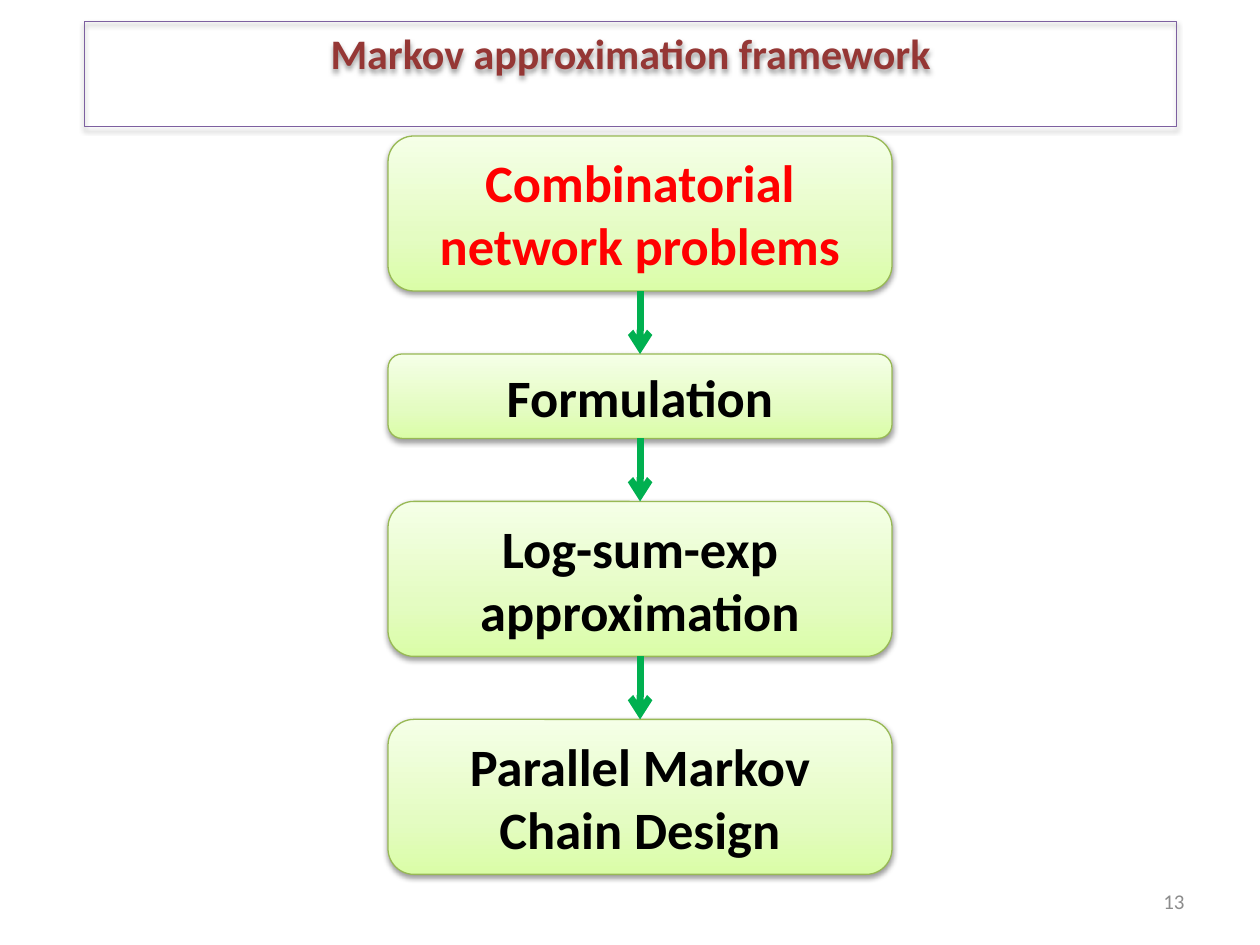
from copy import deepcopy

from lxml import etree
from pptx import Presentation
from pptx.dml.color import RGBColor
from pptx.enum.shapes import MSO_CONNECTOR, MSO_SHAPE
from pptx.enum.text import MSO_ANCHOR, MSO_AUTO_SIZE, PP_ALIGN
from pptx.oxml.ns import qn
from pptx.util import Inches, Pt

STRAIGHT = MSO_CONNECTOR.STRAIGHT
ROUNDED = MSO_SHAPE.ROUNDED_RECTANGLE
TOP, MIDDLE = MSO_ANCHOR.TOP, MSO_ANCHOR.MIDDLE
CENTER, RIGHT = PP_ALIGN.CENTER, PP_ALIGN.RIGHT
FIT_SHAPE, NO_FIT = MSO_AUTO_SIZE.SHAPE_TO_FIT_TEXT, MSO_AUTO_SIZE.NONE

BLACK = RGBColor(0x00, 0x00, 0x00)
RED = RGBColor(0xFF, 0x00, 0x00)
MAROON = RGBColor(0x95, 0x37, 0x35)
PURPLE = RGBColor(0x7D, 0x60, 0xA0)
GRAY = RGBColor(0x8C, 0x8C, 0x8C)
ARROW_GREEN = RGBColor(0x00, 0xB0, 0x50)
EDGE_GREEN = RGBColor(0x98, 0xB9, 0x55)
STEP_GRADIENT = [
    (0, RGBColor(0xDA, 0xFD, 0xA7)),
    (0.35, RGBColor(0xE4, 0xFC, 0xC2)),
    (1, RGBColor(0xF5, 0xFF, 0xE7)),
]

STEP_LEFT, STEP_TOP, STEP_WIDTH, STEP_GAP = 3.08, 1.08, 4, 0.5
STEPS = [
    ("Combinatorial network problems", 1.23, RED),
    ("Formulation", 0.67, BLACK),
    ("Log-sum-exp approximation", 1.23, BLACK),
    ("Parallel Markov Chain Design", 1.23, BLACK),
]


def write_text(shape, text, *, size, color, bold=False, align=CENTER,
               anchor=MIDDLE, fit=FIT_SHAPE):
    frame = shape.text_frame
    frame.word_wrap = True
    frame.auto_size = fit
    frame.vertical_anchor = anchor
    paragraph = frame.paragraphs[0]
    paragraph.alignment = align
    run = paragraph.add_run()
    run.text = text
    run.font.name = "Calibri"
    run.font.size = Pt(size)
    run.font.bold = bold
    run.font.color.rgb = color


def place(shape, left, top, width, height):
    shape.left, shape.top = Inches(left), Inches(top)
    shape.width, shape.height = Inches(width), Inches(height)


def outline(shape, color, width):
    shape.line.color.rgb = color
    shape.line.width = Pt(width)


def add_shadow(shape):
    shape.shadow.inherit = False
    effects = shape._element.spPr.find(qn("a:effectLst"))
    shadow = etree.SubElement(
        effects, qn("a:outerShdw"), blurRad=str(Pt(3.15)), dist=str(Pt(1.57)),
        dir="5400000", rotWithShape="0")
    color = etree.SubElement(shadow, qn("a:srgbClr"), val=str(BLACK))
    etree.SubElement(color, qn("a:alpha"), val="38000")


def fill_gradient(shape, stops):
    shape.fill.gradient()
    shape.fill.gradient_angle = 90
    stop_list = shape._element.spPr.find(qn("a:gradFill")).find(qn("a:gsLst"))
    while len(stop_list) < len(stops):
        stop_list.append(deepcopy(stop_list[0]))
    for stop, (position, color) in zip(shape.fill.gradient_stops, stops):
        stop.position = position
        stop.color.rgb = color


def add_title(slide, text):
    title = slide.shapes.title
    place(title, 0.67, 0.17, 8.67, 0.56)
    geometry = etree.SubElement(
        title._element.spPr, qn("a:prstGeom"), prst="flowChartAlternateProcess")
    etree.SubElement(geometry, qn("a:avLst"))
    title.fill.background()
    outline(title, PURPLE, 0.75)
    add_shadow(title)
    write_text(title, text, size=24, color=MAROON, bold=True, anchor=TOP)


def add_step(slide, text, top, height, color):
    step = slide.shapes.add_shape(
        ROUNDED, Inches(STEP_LEFT), Inches(top), Inches(STEP_WIDTH), Inches(height))
    fill_gradient(step, STEP_GRADIENT)
    outline(step, EDGE_GREEN, 0.75)
    add_shadow(step)
    write_text(step, text, size=30, color=color, bold=True)
    return step


def add_arrow(slide, upper, lower):
    arrow = slide.shapes.add_connector(STRAIGHT, 0, 0, 0, 0)
    arrow.begin_connect(upper, 2)
    arrow.end_connect(lower, 0)
    outline(arrow, ARROW_GREEN, 4)
    etree.SubElement(arrow.line._get_or_add_ln(), qn("a:tailEnd"), type="arrow")
    etree.SubElement(arrow._element.spPr, qn("a:effectLst"))


def add_page_number(slide, number):
    page = slide.shapes.add_textbox(
        Inches(7.17), Inches(6.95), Inches(2.33), Inches(0.4))
    write_text(page, number, size=12, color=GRAY, align=RIGHT, fit=NO_FIT)


def main():
    deck = Presentation()
    deck.slide_width, deck.slide_height = Inches(10), Inches(7.5)
    slide = deck.slides.add_slide(deck.slide_layouts[5])
    add_title(slide, "Markov approximation framework")

    steps = []
    top = STEP_TOP
    for text, height, color in STEPS:
        steps.append(add_step(slide, text, top, height, color))
        top += height + STEP_GAP
    for upper, lower in zip(steps, steps[1:]):
        add_arrow(slide, upper, lower)

    add_page_number(slide, "13")
    deck.save("out.pptx")


if __name__ == "__main__":
    main()
